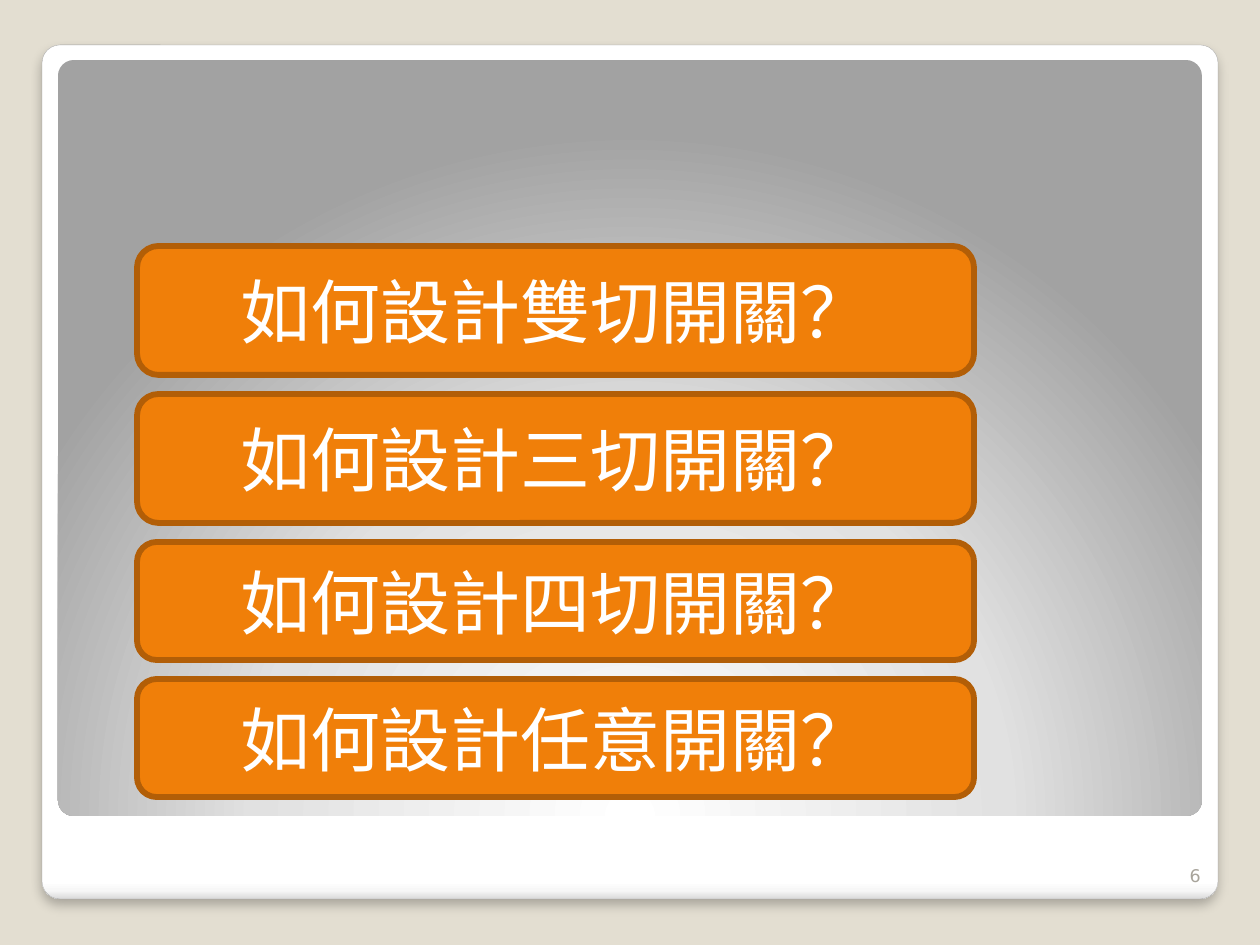
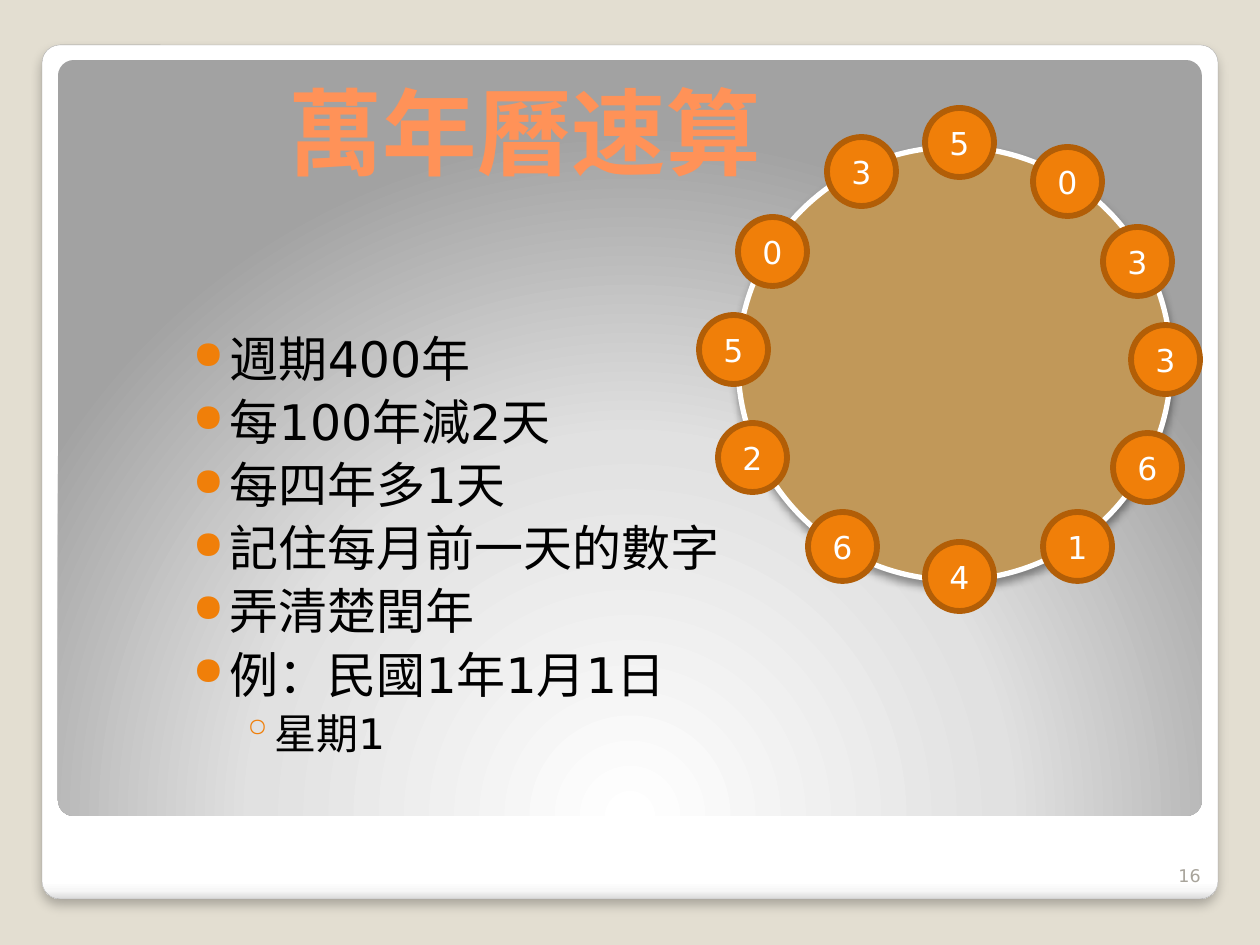
from lxml import etree
from pptx import Presentation, util as u
from pptx.dml.color import RGBColor
from pptx.enum import shapes, text
from pptx.oxml import ns

FONT = "DejaVu Sans"
SCALE = 914400 / 126  # EMU in one px
COLORS = {
    "page": "E3DED1", "white": "FFFFFF", "black": "000000",
    "edge": "A4A4A4", "number": "A8A49B", "title": "FF9258",
    "orange": "F07F09", "rust": "B25E07", "tan": "C19859",
}
ROUND = shapes.MSO_SHAPE.ROUNDED_RECTANGLE
OVAL = shapes.MSO_SHAPE.OVAL
MIDDLE = text.MSO_ANCHOR.MIDDLE
BOTTOM = text.MSO_ANCHOR.BOTTOM
ALIGN = text.PP_ALIGN


def px(n):
    return u.Emu(round(n * SCALE))


def rgb(name):
    return RGBColor.from_string(COLORS[name])


def add_xml(parent, tag, **attrs):
    node = etree.SubElement(parent, ns.qn(tag))
    for key, value in attrs.items():
        node.set(key, str(value))
    return node


def add_color(parent, value):
    return add_xml(parent, "a:srgbClr", val=value)


# Text
def write(frame, words, size, color, align=ALIGN.LEFT, anchor=text.MSO_ANCHOR.TOP, bold=False):
    frame.word_wrap = True
    frame.vertical_anchor = anchor
    frame.text = words
    for para in frame.paragraphs:
        para.alignment = align
        for run in para.runs:
            run.font.name = FONT
            run.font.size = u.Pt(size)
            run.font.bold = bold
            run.font.color.rgb = rgb(color)


def add_text(slide, box, words, size, color, **style):
    frame = slide.shapes.add_textbox(*map(px, box)).text_frame
    write(frame, words, size, color, **style)
    return frame


def set_bullet(para, char, left, hang, percent):
    props = para._p.get_or_add_pPr()
    props.set("marL", str(px(left)))
    props.set("indent", str(-px(hang)))
    add_color(add_xml(props, "a:buClr"), COLORS["orange"])
    add_xml(props, "a:buSzPct", val=percent * 1000)
    add_xml(props, "a:buChar", char=char)


# Shapes
def add_shape(slide, kind, box, fill=None, line=None, width=0):
    shape = slide.shapes.add_shape(kind, *map(px, box))
    shape.shadow.inherit = False
    if fill:
        shape.fill.solid()
        shape.fill.fore_color.rgb = rgb(fill)
    else:
        shape.fill.background()
    if line:
        shape.line.color.rgb = rgb(line)
        shape.line.width = u.Pt(width)
    else:
        shape.line.fill.background()
    return shape


def set_blend(shape, stops):
    """Replace the empty fill by a gradient and return it for its direction."""
    props = shape._element.spPr
    blend = etree.Element(ns.qn("a:gradFill"), rotWithShape="1")
    steps = add_xml(blend, "a:gsLst")
    for spot, color in stops:
        add_color(add_xml(steps, "a:gs", pos=spot * 1000), color)
    props.replace(props.find(ns.qn("a:noFill")), blend)
    return blend


def add_shade(shape, alpha, blur, dist):
    effects = shape._element.spPr.find(ns.qn("a:effectLst"))
    shade = add_xml(effects, "a:outerShdw", blurRad=u.Pt(blur), dist=u.Pt(dist),
                    dir=5400000, algn="ctr", rotWithShape=0)
    add_xml(add_color(shade, COLORS["black"]), "a:alpha", val=alpha * 1000)


def add_label(slide, kind, box, words, size):
    shape = add_shape(slide, kind, box, "orange", "rust", 3.35)
    write(shape.text_frame, words, size, "white", align=ALIGN.CENTER, anchor=MIDDLE)


# Shared frame: page colour, white card, grey panel, page number
def add_page(deck, number):
    slide = deck.slides.add_slide(deck.slide_layouts[6])
    slide.background.fill.solid()
    slide.background.fill.fore_color.rgb = rgb("page")

    card = add_shape(slide, ROUND, (42, 45, 1176, 854), line="edge", width=0.16)
    blend = set_blend(card, [(0, "FFFFFF"), (98, "FFFFFF"), (99, "F7F7F7"), (100, "DADADA")])
    add_xml(blend, "a:lin", ang=5400000, scaled=0)
    add_shade(card, 25, 6, 4)

    panel = add_shape(slide, ROUND, (58, 60, 1144, 756))
    blend = set_blend(panel, [(0, "FFFFFF"), (55, "E1E1E1"), (100, "A2A2A2")])
    glow = add_xml(blend, "a:path", path="circle")
    add_xml(glow, "a:fillToRect", l=50000, t=175000, r=50000, b=-75000)

    for shape in (card, panel):
        shape.adjustments[0] = 0.021
    add_text(slide, (1150, 842, 63, 50), str(number), 10, "number",
             align=ALIGN.RIGHT, anchor=BOTTOM)
    return slide


# Slide with the four questions
def add_asks(deck):
    slide = add_page(deck, 6)
    top, gap = 246, 19
    for kind, height in (("雙切", 129), ("三切", 129), ("四切", 118), ("任意", 118)):
        add_label(slide, ROUND, (137, top, 837, height), f"如何設計{kind}開關？", 40)
        top += height + gap


# Slide with the calendar rules and the ring of month numbers
def add_dates(deck):
    slide = add_page(deck, 16)
    add_text(slide, (276, 49, 931, 145), "萬年曆速算", 54, "title", anchor=BOTTOM, bold=True)

    rules = ["週期400年", "每100年減2天", "每四年多1天", "記住每月前一天的數字",
             "弄清楚閏年", "例：民國1年1月1日", "星期1"]
    frame = add_text(slide, (168, 315, 1009, 462), "\n".join(rules), 28, "black")
    frame.margin_left, frame.margin_top = px(25), px(13)
    *main_rows, answer = frame.paragraphs
    for para in main_rows:
        set_bullet(para, "●", 37, 37, 80)
    set_bullet(answer, "◦", 76, 28, 100)
    answer.level = 1
    answer.runs[0].font.size = u.Pt(24)
    for para in frame.paragraphs[1:]:
        para.space_before = u.Pt(2.5)

    disc = add_shape(slide, OVAL, (738, 147, 433, 433), "tan", "white", 3)
    add_shade(disc, 40, 5.2, 3)
    # Clockwise from the top
    months = [(925, 108, 5), (1033, 147, 0), (1103, 227, 3), (1131, 325, 3),
              (1113, 433, 6), (1043, 512, 1), (925, 542, 4), (808, 512, 6),
              (718, 423, 2), (699, 315, 5), (738, 217, 0), (827, 137, 3)]
    for left, top, digit in months:
        add_label(slide, OVAL, (left, top, 69, 69), str(digit), 18)


def main():
    deck = Presentation()
    deck.slide_width, deck.slide_height = px(1260), px(945)
    add_asks(deck)
    add_dates(deck)
    deck.save("out.pptx")


if __name__ == "__main__":
    main()
